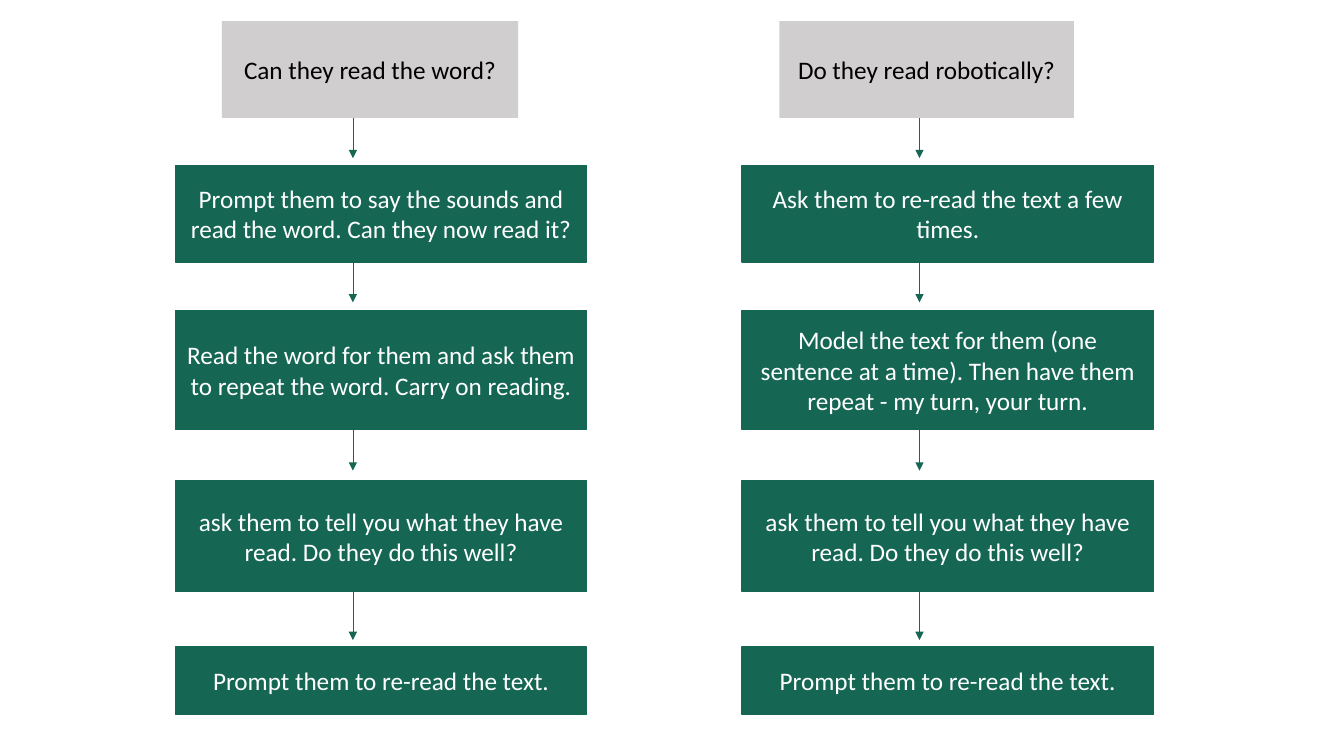
from lxml import etree
from pptx import Presentation
from pptx.dml.color import RGBColor
from pptx.enum.shapes import MSO_CONNECTOR, MSO_SHAPE
from pptx.enum.text import MSO_ANCHOR, PP_ALIGN
from pptx.oxml.ns import qn
from pptx.util import Inches, Pt

RECTANGLE = MSO_SHAPE.RECTANGLE
STRAIGHT = MSO_CONNECTOR.STRAIGHT
MIDDLE = MSO_ANCHOR.MIDDLE
CENTER = PP_ALIGN.CENTER

COLORS = {"step": "156754", "question": "D0CECE", "light": "FFFFFF", "dark": "000000"}

FLOWS = [
    {
        "left": 1.74,
        "question": "Can they read the word?",
        "question_left": 2.2,
        "question_width": 2.94,
        "steps": [
            "Prompt them to say the sounds and read the word. Can they now read it?",
            "Read the word for them and ask them to repeat the word. Carry on reading.",
            "ask them to tell you what they have read. Do they do this well?",
            "Prompt them to re-read the text.",
        ],
    },
    {
        "left": 7.36,
        "question": "Do they read robotically?",
        "question_left": 7.73,
        "question_width": 2.92,
        "steps": [
            "Ask them to re-read the text a few times.",
            "Model the text for them (one sentence at a time). Then have them repeat - my turn, your turn.",
            "ask them to tell you what they have read. Do they do this well?",
            "Prompt them to re-read the text.",
        ],
    },
]
QUESTION_TOP, QUESTION_HEIGHT = 0.21, 0.96
STEP_ROWS = [(1.64, 0.96), (3.08, 1.18), (4.77, 1.1), (6.42, 0.67)]
ARROW_ROWS = [(1.08, 1.57), (2.61, 3), (4.26, 4.67), (5.86, 6.35)]
STEP_WIDTH = 4.08
ARROW_INDENT = 1.76


def color(name):
    return RGBColor.from_string(COLORS[name])


def add_box(slide, text, left, top, width, height, fill="step", ink="light", outline="step"):
    box = slide.shapes.add_shape(
        RECTANGLE, Inches(left), Inches(top), Inches(width), Inches(height)
    )
    box.shadow.inherit = False
    box.fill.solid()
    box.fill.fore_color.rgb = color(fill)
    if outline:
        box.line.color.rgb = color(outline)
        box.line.width = Pt(1)
    else:
        box.line.fill.background()
    frame = box.text_frame
    frame.word_wrap = True
    frame.vertical_anchor = MIDDLE
    paragraph = frame.paragraphs[0]
    paragraph.alignment = CENTER
    run = paragraph.add_run()
    run.text = text
    run.font.name = "Calibri"
    run.font.size = Pt(18)
    run.font.color.rgb = color(ink)


def add_arrow(slide, x, start, end):
    arrow = slide.shapes.add_connector(
        STRAIGHT, Inches(x), Inches(start), Inches(x), Inches(end)
    )
    arrow.line.color.rgb = color("step")
    arrow.line.width = Pt(0.5)
    properties = arrow.line._get_or_add_ln()
    etree.SubElement(properties, qn("a:tailEnd"), type="triangle")
    etree.SubElement(properties.getparent(), qn("a:effectLst"))


def main():
    deck = Presentation()
    deck.slide_width, deck.slide_height = Inches(13.33), Inches(7.5)
    slide = deck.slides.add_slide(deck.slide_layouts[6])

    for flow in FLOWS:
        for start, end in ARROW_ROWS:
            add_arrow(slide, flow["left"] + ARROW_INDENT, start, end)
        add_box(
            slide, flow["question"], flow["question_left"], QUESTION_TOP,
            flow["question_width"], QUESTION_HEIGHT,
            fill="question", ink="dark", outline=None,
        )
        for step, (top, height) in zip(flow["steps"], STEP_ROWS):
            add_box(slide, step, flow["left"], top, STEP_WIDTH, height)

    deck.save("out.pptx")


if __name__ == "__main__":
    main()
